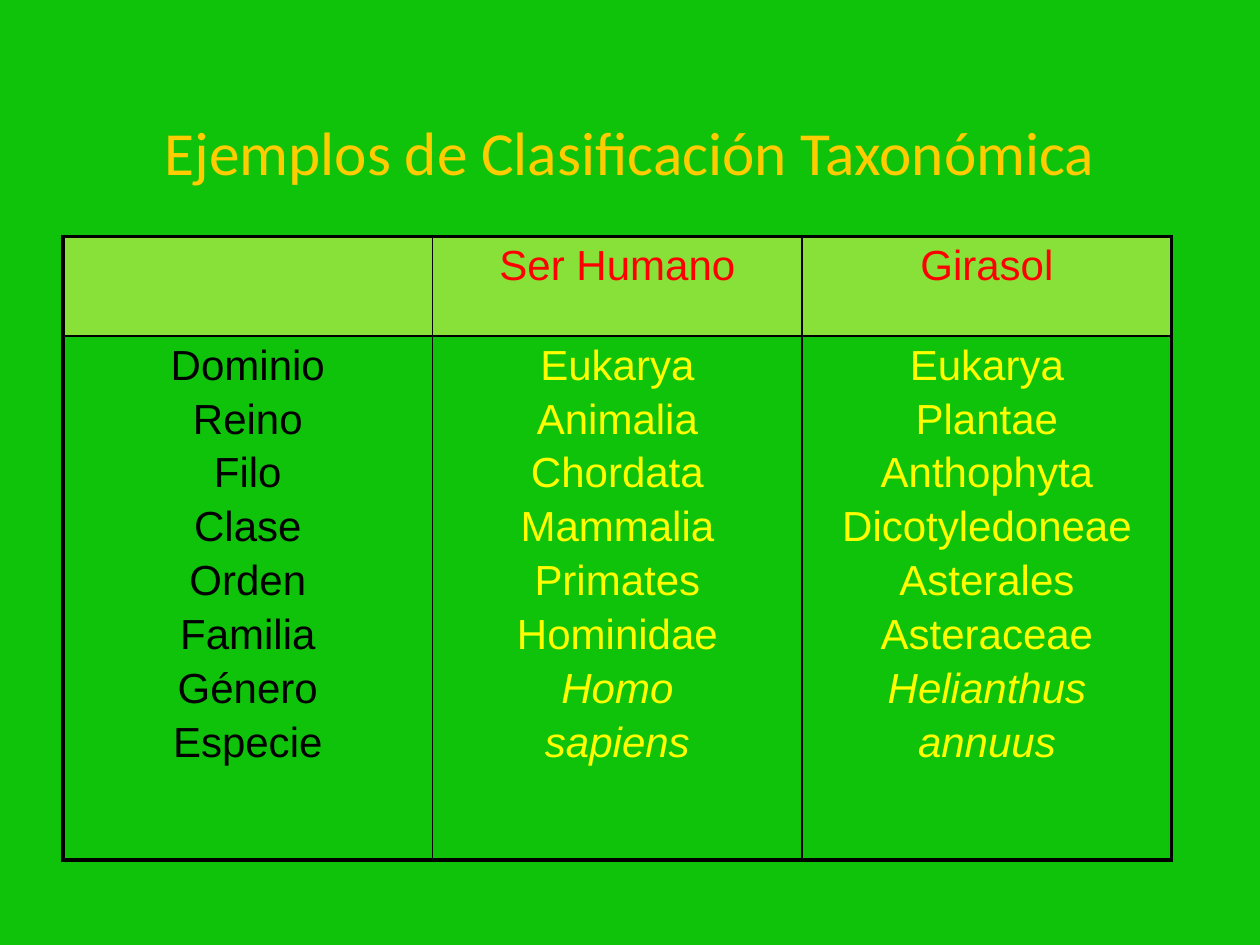
from dataclasses import dataclass

from lxml.etree import SubElement
from pptx import Presentation
from pptx.dml.color import RGBColor
from pptx.enum.text import MSO_ANCHOR, MSO_AUTO_SIZE, PP_ALIGN
from pptx.oxml import parse_xml
from pptx.oxml.ns import nsdecls, qn
from pptx.util import Inches, Pt


@dataclass(frozen=True)
class Theme:
    """Colours, fonts and sizes of the slide."""
    back: str = "0FC30B"
    title: str = "FFCC00"
    header_fill: str = "FFFF66"
    header: str = "FF0000"
    rank: str = "000000"
    taxon: str = "FFFF00"
    border: str = "000000"
    title_font: str = "Calibri"
    body_font: str = "Arial"
    title_size: float = 35
    body_size: float = 24
    space_before: float = 4
    outer: float = 2.25
    inner: float = 1


THEME = Theme()
HEADERS = ["", "Ser Humano", "Girasol"]
COLUMNS = [
    ["Dominio", "Reino", "Filo", "Clase", "Orden", "Familia", "Género", "Especie"],
    ["Eukarya", "Animalia", "Chordata", "Mammalia", "Primates", "Hominidae",
     "Homo", "sapiens"],
    ["Eukarya", "Plantae", "Anthophyta", "Dicotyledoneae", "Asterales",
     "Asteraceae", "Helianthus", "annuus"],
]
ITALIC_FROM = 6


def write(p, text, *, font, size, color, italic=False, before=0):
    """Write one centred paragraph."""
    p.alignment = PP_ALIGN.CENTER
    p.space_before = Pt(before)
    r = p.add_run()
    r.text = text
    r.font.name = font
    r.font.size = Pt(size)
    r.font.italic = italic
    r.font.color.rgb = RGBColor.from_string(color)


def fill_cell(cell, lines, color, italic_from=None):
    """Write a list of lines in a table cell."""
    tf = cell.text_frame
    for i, line in enumerate(lines):
        p = tf.add_paragraph() if i else tf.paragraphs[0]
        write(p, line, font=THEME.body_font, size=THEME.body_size, color=color,
              italic=italic_from is not None and i >= italic_from,
              before=THEME.space_before)


def set_borders(cell, **widths):
    """Draw the borders L, R, T and B of a cell in points."""
    tc_pr = cell._tc.get_or_add_tcPr()
    for i, (side, width) in enumerate(widths.items()):
        tc_pr.insert(i, parse_xml(
            f'<a:ln{side} {nsdecls("a")} w="{Pt(width)}"><a:solidFill>'
            f'<a:srgbClr val="{THEME.border}"/></a:solidFill></a:ln{side}>'))


def shade(cell, color, alpha):
    """Fill a cell with a see-through colour, alpha in percent."""
    cell.fill.solid()
    cell.fill.fore_color.rgb = RGBColor.from_string(color)
    clr = cell._tc.tcPr.find(qn("a:solidFill")).find(qn("a:srgbClr"))
    SubElement(clr, qn("a:alpha")).set("val", str(alpha * 1000))


def place_title(slide, text, box):
    """Place the slide title in its box."""
    sp = slide.shapes.title
    sp.left, sp.top, sp.width, sp.height = box
    tf = sp.text_frame
    tf.auto_size = MSO_AUTO_SIZE.NONE
    tf.vertical_anchor = MSO_ANCHOR.MIDDLE
    write(tf.paragraphs[0], text, font=THEME.title_font, size=THEME.title_size,
          color=THEME.title)


def place_table(slide, box, header_share):
    """Place the classification table in its box."""
    n = len(HEADERS)
    table = slide.shapes.add_table(2, n, *box).table
    table.first_row = table.horz_banding = False
    table.rows[0].height = int(box[3] * header_share)
    table.rows[1].height = box[3] - table.rows[0].height
    outer, inner = THEME.outer, THEME.inner
    for c, (header, names) in enumerate(zip(HEADERS, COLUMNS)):
        table.columns[c].width = box[2] // n
        top, body = table.cell(0, c), table.cell(1, c)
        if header:
            fill_cell(top, [header], THEME.header)
        shade(top, THEME.header_fill, 50)
        fill_cell(body, names, THEME.taxon if c else THEME.rank,
                  ITALIC_FROM if c else None)
        body.fill.background()
        left = inner if c else outer
        right = inner if c < n - 1 else outer
        set_borders(top, L=left, R=right, T=outer, B=inner)
        set_borders(body, L=left, R=right, T=inner, B=outer)


def main():
    """Build and save the slide."""
    prs = Presentation()
    prs.slide_width, prs.slide_height = Inches(10), Inches(7.5)
    slide = prs.slides.add_slide(prs.slide_layouts[5])
    fill = slide.background.fill
    fill.solid()
    fill.fore_color.rgb = RGBColor.from_string(THEME.back)

    def share(x, y, w, h):
        """Turn shares of the slide into a box."""
        return (int(prs.slide_width * x), int(prs.slide_height * y),
                int(prs.slide_width * w), int(prs.slide_height * h))

    place_title(slide, "Ejemplos de Clasificación Taxonómica",
                share(0.05, 0.06, 0.9, 0.2))
    place_table(slide, share(0.05, 0.25, 0.88, 0.66), 0.16)
    prs.save("out.pptx")


if __name__ == "__main__":
    main()
